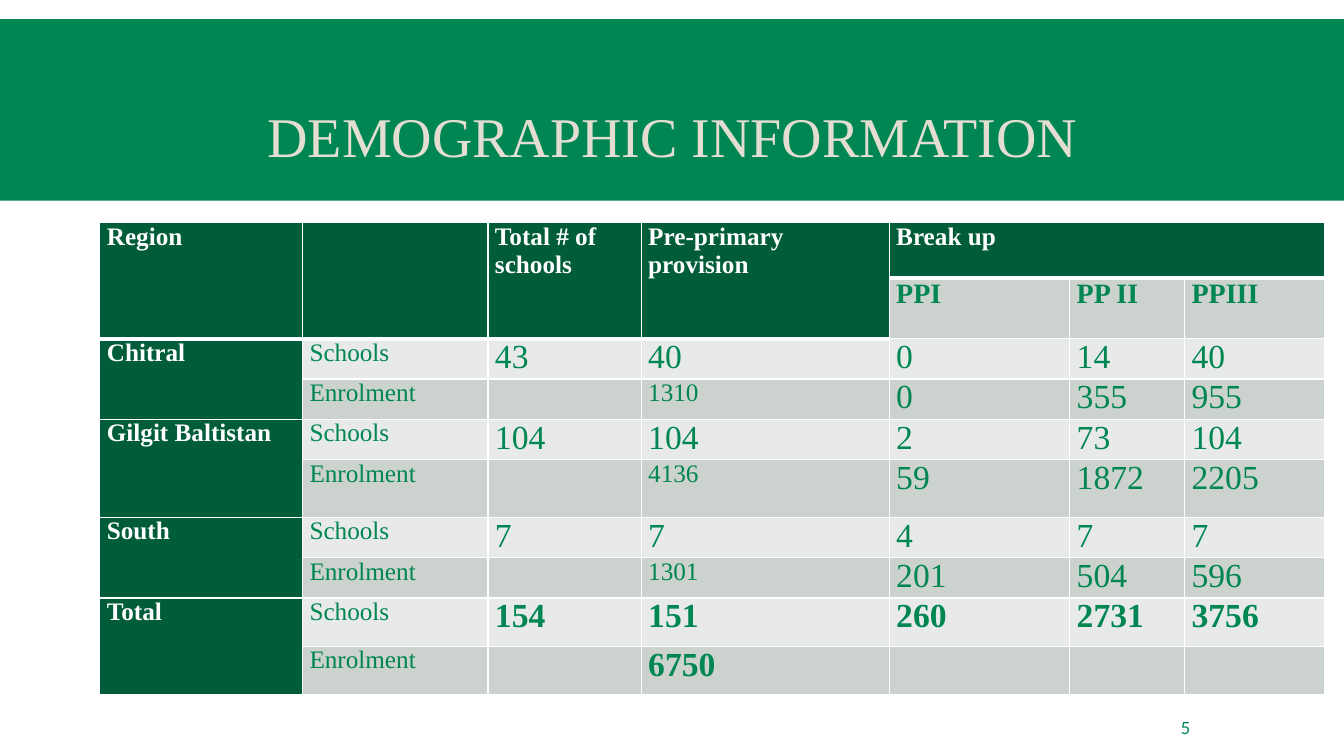
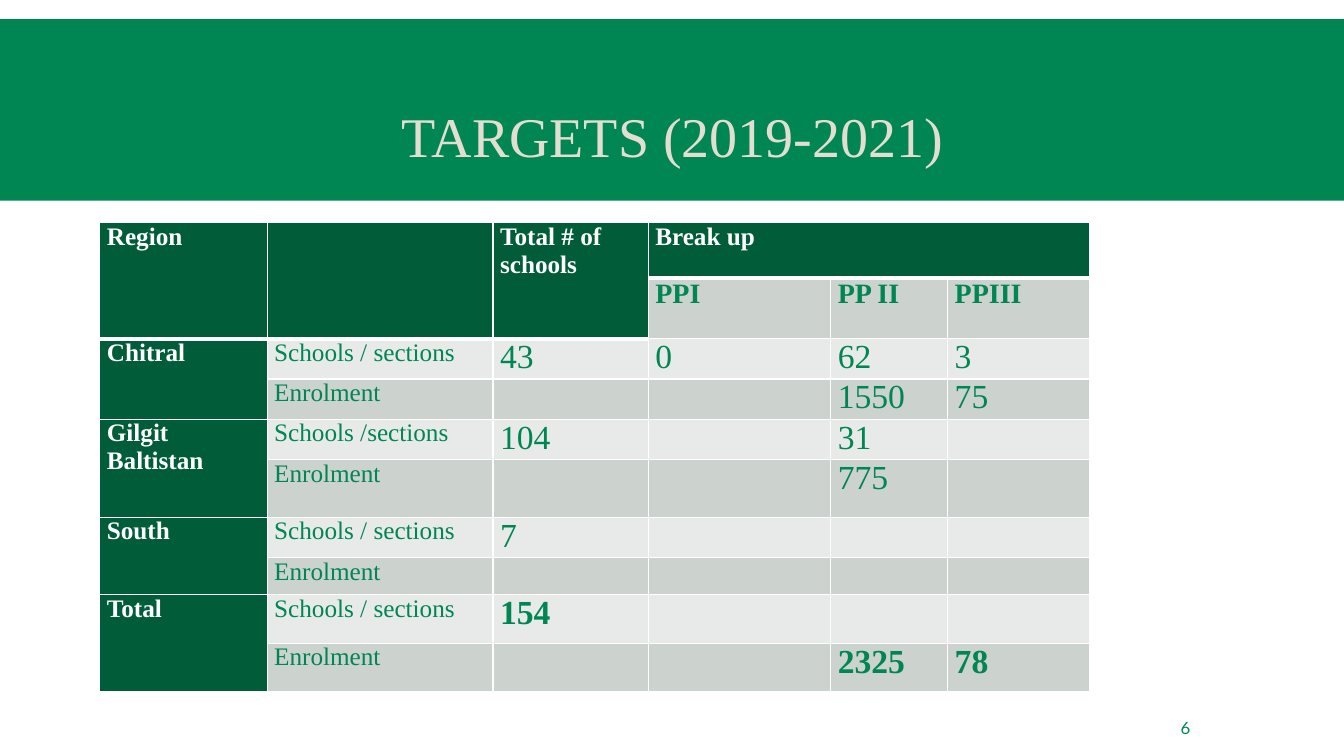
from dataclasses import dataclass

from lxml.etree import SubElement
from pptx import Presentation
from pptx.dml.color import RGBColor as RGB
from pptx.enum.shapes import MSO_SHAPE as SHAPE
from pptx.enum.text import MSO_ANCHOR as ANCHOR, MSO_AUTO_SIZE as AUTO, PP_ALIGN as ALIGN
from pptx.oxml.ns import qn
from pptx.util import Inches, Pt


@dataclass(frozen=True)
class Theme:
    green: str = "008652"
    dark: str = "005C39"
    cream: str = "E3DED1"
    white: str = "FFFFFF"
    light: str = "E7EAE8"
    grey: str = "CCD2CE"
    serif: str = "Times New Roman"
    sans: str = "Lato"
    title_pt: int = 40
    number_pt: int = 24
    subhead_pt: int = 20
    label_pt: int = 18
    footer_pt: int = 12
    line_pt: int = 1
    heavy_pt: int = 3


ROW_HEIGHTS = [0.55, 0.55, 0.37, 0.37, 0.37, 0.57, 0.37, 0.37, 0.48, 0.48]
REGIONS = ["Chitral", "Gilgit Baltistan", "South", "Total"]
BREAK_UP = ["PPI", "PP II", "PPIII"]


class Deck:
    """Slides with a green title band and a regional table."""

    def __init__(self, theme):
        self.theme = theme
        self.prs = Presentation()
        self.prs.slide_width = Inches(13.33)
        self.prs.slide_height = Inches(7.5)
        self.s = None

    def font(self, p, size, color, name=None, bold=False):
        f = p.font
        f.name = name or self.theme.serif
        f.size = Pt(size)
        f.bold = bold
        f.color.rgb = RGB.from_string(color)

    def slide(self, title, number):
        self.s = self.prs.slides.add_slide(self.prs.slide_layouts[5])
        self.title(title)
        self.band()
        self.page_number(number)

    def title(self, text):
        sp = self.s.shapes.title
        sp.left, sp.top = Inches(1.32), Inches(0.31)
        sp.width, sp.height = Inches(10.7), Inches(1.65)
        tf = sp.text_frame
        tf.auto_size = AUTO.NONE
        tf.vertical_anchor = ANCHOR.MIDDLE
        tf.margin_top = Inches(0.57)
        p = tf.paragraphs[0]
        p.text = text
        p.alignment = ALIGN.CENTER
        p.line_spacing = 0.85
        self.font(p, self.theme.title_pt, self.theme.cream)

    def band(self):
        sp = self.s.shapes.add_shape(
            SHAPE.RECTANGLE, 0, Inches(0.19), self.prs.slide_width, Inches(1.8))
        sp.shadow.inherit = False
        sp.fill.solid()
        sp.fill.fore_color.rgb = RGB.from_string(self.theme.green)
        sp.line.fill.background()
        self.s.shapes.title.element.addprevious(sp.element)

    def page_number(self, number):
        sp = self.s.shapes.add_textbox(
            Inches(11.66), Inches(7.02), Inches(1.03), Inches(0.4))
        tf = sp.text_frame
        tf.word_wrap = True
        tf.vertical_anchor = ANCHOR.MIDDLE
        tf.margin_left = tf.margin_top = tf.margin_bottom = Inches(0.05)
        p = tf.paragraphs[0]
        p.text = str(number)
        self.font(p, self.theme.footer_pt, self.theme.green, self.theme.sans)

    def borders(self, cell, top, bottom):
        tc_pr = cell._tc.get_or_add_tcPr()
        thin = self.theme.line_pt
        for side, width in zip("LRTB", (thin, thin, top, bottom)):
            ln = SubElement(tc_pr, qn(f"a:ln{side}"), w=str(Pt(width)))
            fill = SubElement(ln, qn("a:solidFill"))
            SubElement(fill, qn("a:srgbClr"), val=self.theme.white)

    def cell(self, cell, text, fill, size, color, bold):
        cell.margin_left = cell.margin_right = Inches(0.07)
        cell.margin_top = cell.margin_bottom = 0
        cell.fill.solid()
        cell.fill.fore_color.rgb = RGB.from_string(fill)
        p = cell.text_frame.paragraphs[0]
        p.text = text
        self.font(p, size, color, bold=bold)

    def table(self, widths, heads, body, small_col=None):
        t = self.theme
        lead = len(heads)
        rows = [heads + ["Break up", "", ""], [""] * lead + BREAK_UP]
        for i, values in enumerate(body):
            rows.append([REGIONS[i // 2] if i % 2 == 0 else ""] + values)
        table = self.s.shapes.add_table(
            len(rows), len(widths), Inches(0.99), Inches(2.21),
            Inches(sum(widths)), Inches(sum(ROW_HEIGHTS))).table
        table.first_row = table.horz_banding = False
        for column, width in zip(table.columns, widths):
            column.width = Inches(width)
        for row, height in zip(table.rows, ROW_HEIGHTS):
            row.height = Inches(height)
        for c in range(lead):
            table.cell(0, c).merge(table.cell(1, c))
        table.cell(0, lead).merge(table.cell(0, len(widths) - 1))
        for r in range(2, len(rows), 2):
            table.cell(r, 0).merge(table.cell(r + 1, 0))

        for r, row in enumerate(rows):
            for c, text in enumerate(row):
                cell = table.cell(r, c)
                head_end = 2 if c < lead else 1
                top, bottom = (t.heavy_pt if edge == head_end else t.line_pt
                               for edge in (r, r + cell.span_height))
                self.borders(cell, top, bottom)
                total = r >= len(rows) - 2
                if c == 0 or r < head_end:
                    look = t.dark, t.label_pt, t.white, True
                elif r == 1:
                    look = t.grey, t.subhead_pt, t.green, True
                else:
                    small = c == 1 or not text or (
                        c == small_col and r % 2 == 1 and not total)
                    look = (t.grey if r % 2 else t.light,
                            t.label_pt if small else t.number_pt,
                            t.green, total and c > 1)
                self.cell(cell, text, *look)


def main():
    deck = Deck(Theme())
    deck.slide("DEMOGRAPHIC INFORMATION", 5)
    deck.table(
        [2.01, 1.84, 1.52, 2.46, 1.79, 1.14, 1.39],
        ["Region", "", "Total # of schools", "Pre-primary provision"],
        [
            ["Schools", "43", "40", "0", "14", "40"],
            ["Enrolment", "", "1310", "0", "355", "955"],
            ["Schools", "104", "104", "2", "73", "104"],
            ["Enrolment", "", "4136", "59", "1872", "2205"],
            ["Schools", "7", "7", "4", "7", "7"],
            ["Enrolment", "", "1301", "201", "504", "596"],
            ["Schools", "154", "151", "260", "2731", "3756"],
            ["Enrolment", "", "6750", "", "", ""],
        ],
        small_col=3)
    deck.slide("TARGETS (2019-2021)", 6)
    deck.table(
        [1.66, 2.24, 1.54, 1.81, 1.16, 1.41],
        ["Region", "", "Total # of schools"],
        [
            ["Schools / sections", "43", "0", "62", "3"],
            ["Enrolment", "", "", "1550", "75"],
            ["Schools /sections", "104", "", "31", ""],
            ["Enrolment", "", "", "775", ""],
            ["Schools / sections", "7", "", "", ""],
            ["Enrolment", "", "", "", ""],
            ["Schools / sections", "154", "", "", ""],
            ["Enrolment", "", "", "2325", "78"],
        ])
    deck.prs.save("out.pptx")


if __name__ == "__main__":
    main()
